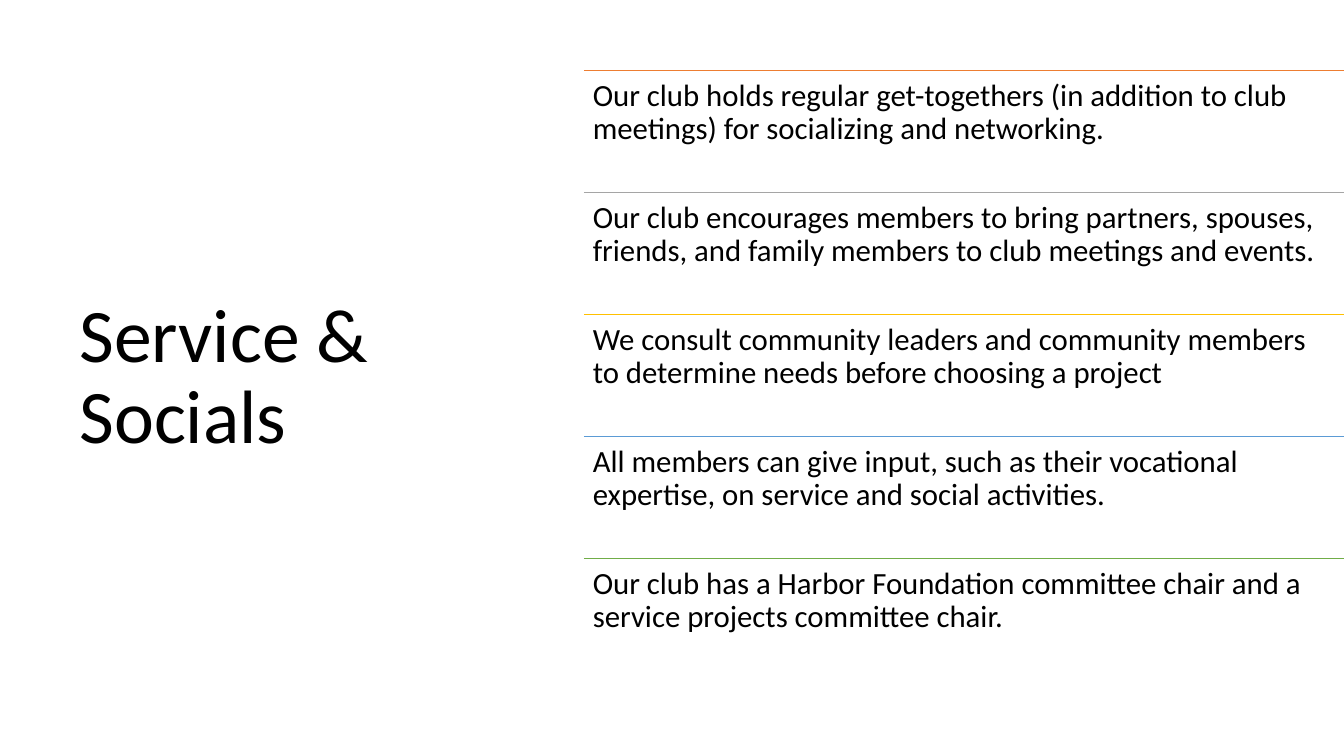
from lxml.etree import SubElement
from pptx import Presentation
from pptx.dml.color import RGBColor as Color
from pptx.enum.shapes import MSO_CONNECTOR as Link
from pptx.enum.text import MSO_ANCHOR as Anchor
from pptx.oxml.ns import qn
from pptx.util import Inches, Pt

WIDE, HIGH = 13.33, 7.5
TOP = 0.7
ROW = 1.21
FONT = "Calibri"
INK = "000000"
ITEMS = [
    ("ED7D31", "Our club holds regular get-togethers (in addition to club meetings) for socializing and networking."),
    ("A5A5A5", "Our club encourages members to bring partners, spouses, friends, and family members to club meetings and events."),
    ("FFC000", "We consult community leaders and community members to determine needs before choosing a project"),
    ("5B9BD5", "All members can give input, such as their vocational expertise, on service and social activities."),
    ("70AD47", "Our club has a Harbor Foundation committee chair and a service projects committee chair."),
]


def paint(target, tone):
    """Give a font or a line its colour from a hex string."""
    fill = target.fill
    fill.solid()
    fill.fore_color.rgb = Color.from_string(tone)


def write(slide, box, words, size, anchor=Anchor.TOP, inset=(0.1, 0.05), after=0):
    """Place one wrapped paragraph in the box."""
    frame = slide.shapes.add_textbox(*map(Inches, box)).text_frame
    frame.word_wrap = True
    frame.vertical_anchor = anchor
    frame.margin_left = frame.margin_right = Inches(inset[0])
    frame.margin_top = frame.margin_bottom = Inches(inset[1])
    frame.text = words
    para = frame.paragraphs[0]
    para.line_spacing = 0.9
    para.space_after = Pt(after)
    font = para.runs[0].font
    font.name, font.size = FONT, Pt(size)
    paint(font, INK)


def rule(slide, left, top, width, tone):
    """Draw a thin level line without a shadow."""
    ends = map(Inches, (left, top, left + width, top))
    line = slide.shapes.add_connector(Link.STRAIGHT, *ends)
    line.line.width = Pt(1)
    paint(line.line, tone)
    SubElement(line._element.spPr, qn("a:effectLst"))


def title(slide, box):
    """Set the slide title, centred vertically in the box."""
    write(slide, box, "Service & Socials", 54, Anchor.MIDDLE)


def points(slide, box):
    """Stack the ruled points in equal rows of the box."""
    left, top, width, height = box
    step = height / len(ITEMS)
    for row, (tone, words) in enumerate(ITEMS):
        y = top + row * step
        rule(slide, left, y, width, tone)
        write(slide, (left, y, width, step), words, 22, inset=(0.09, 0.09), after=7.7)


def main():
    """Build and save the slide."""
    deck = Presentation()
    deck.slide_width, deck.slide_height = Inches(WIDE), Inches(HIGH)
    slide = deck.slides.add_slide(deck.slide_layouts[6])
    left = 5.79
    title(slide, (0.69, TOP, 3.74, 6.11))
    points(slide, (left, TOP, WIDE - left, ROW * len(ITEMS)))
    deck.save("out.pptx")


if __name__ == "__main__":
    main()
